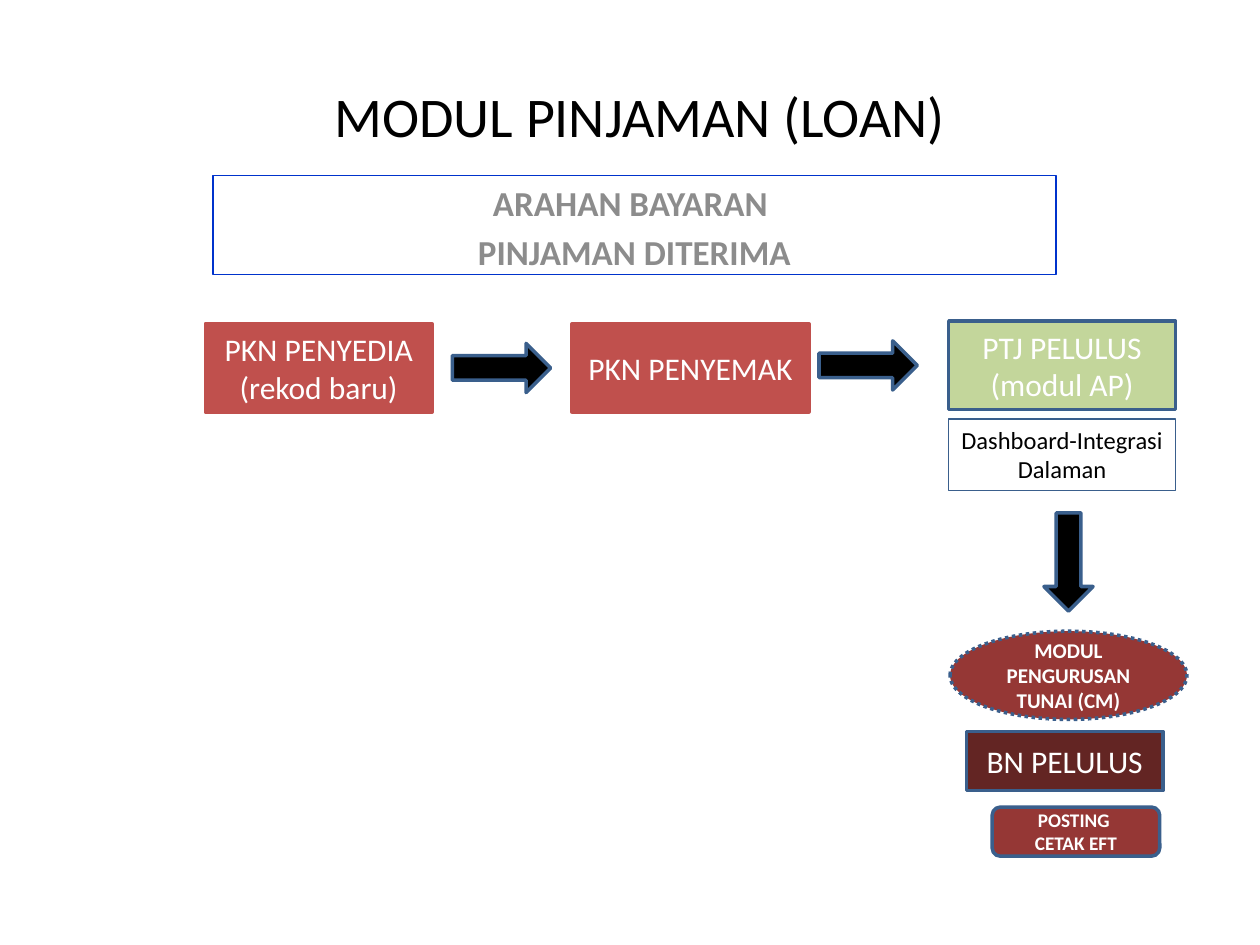
from dataclasses import dataclass
from pptx import Presentation
from pptx.dml.color import RGBColor
from pptx.enum.dml import MSO_LINE as Dash
from pptx.enum.shapes import MSO_SHAPE as Kind
from pptx.enum.text import MSO_ANCHOR as Anchor, MSO_AUTO_SIZE as Fit, PP_ALIGN as Align
from pptx.util import Inches, Pt


@dataclass(frozen=True)
class Theme:
    font: str = "Calibri"
    black: str = "000000"
    white: str = "FFFFFF"
    grey: str = "8C8C8C"
    blue: str = "0033CC"
    edge: str = "3A5F8C"
    red: str = "C0504D"
    green: str = "C3D69B"
    brick: str = "953735"
    wine: str = "632523"
    title: int = 32
    head: int = 20
    step: int = 18
    note: int = 14
    unit: int = 12
    small: int = 11
    thin: float = 0.75
    thick: float = 2


T = Theme()
TITLE = ["MODUL PINJAMAN (LOAN)"]
HEAD = ["ARAHAN BAYARAN ", "PINJAMAN DITERIMA"]

# Grid: centre lines of the columns and rows
COLS = {"maker": 2.53, "go1": 3.98, "check": 5.48, "go2": 6.89,
        "pass": 8.43, "cash": 8.48, "bank": 8.45, "post": 8.54}
ROWS = {"flow": 2.92, "end": 2.9, "note": 3.61, "down": 4.46,
        "cash": 5.36, "bank": 6.04, "post": 6.6}

# Column, row, width, height, lines of text, look
BOXES = [
    ("maker", "flow", 1.8, 0.7, ["PKN PENYEDIA", "(rekod baru)"],
     dict(fill=T.red, edge=T.red)),
    ("check", "flow", 1.88, 0.7, ["PKN PENYEMAK"], dict(fill=T.red, edge=T.red)),
    ("pass", "end", 1.8, 0.7, ["PTJ PELULUS", "(modul AP)"], dict(fill=T.green)),
    ("pass", "note", 1.8, 0.57, ["Dashboard-Integrasi Dalaman"],
     dict(width=T.thin, size=T.note, color=T.black, anchor=Anchor.TOP)),
    ("cash", "cash", 1.88, 0.7, ["MODUL PENGURUSAN TUNAI (CM)"],
     dict(kind=Kind.OVAL, fill=T.brick, dash=Dash.ROUND_DOT, size=T.unit, bold=True)),
    ("bank", "bank", 1.56, 0.47, ["BN PELULUS"], dict(fill=T.wine)),
    ("post", "post", 1.33, 0.39, ["POSTING ", "CETAK EFT"],
     dict(kind=Kind.ROUNDED_RECTANGLE, fill=T.brick, size=T.small, bold=True)),
]
ARROWS = [("go1", "flow", 0), ("go2", "end", 0), ("cash", "down", 90)]


def rgb(code):
    return RGBColor.from_string(code)


def write(shape, lines, size=T.step, color=T.white, bold=False, anchor=Anchor.MIDDLE):
    frame = shape.text_frame
    frame.word_wrap = True
    frame.auto_size = Fit.NONE
    frame.vertical_anchor = anchor
    for i, line in enumerate(lines):
        para = frame.add_paragraph() if i else frame.paragraphs[0]
        para.alignment = Align.CENTER
        run = para.add_run()
        run.text = line
        font = run.font
        font.name, font.size, font.bold = T.font, Pt(size), bold
        font.color.rgb = rgb(color)


def place(shape, left, top, wide, high):
    shape.left, shape.top = Inches(left), Inches(top)
    shape.width, shape.height = Inches(wide), Inches(high)


def draw(slide, col, row, wide, high, kind=Kind.RECTANGLE, fill=None,
         edge=T.edge, width=T.thick, dash=None):
    """Add a shape centred on a grid point."""
    left, top = COLS[col] - wide / 2, ROWS[row] - high / 2
    shape = slide.shapes.add_shape(kind, *map(Inches, (left, top, wide, high)))
    shape.shadow.inherit = False
    if fill:
        shape.fill.solid()
        shape.fill.fore_color.rgb = rgb(fill)
    else:
        shape.fill.background()
    shape.line.color.rgb = rgb(edge)
    shape.line.width = Pt(width)
    if dash:
        shape.line.dash_style = dash
    return shape


def main():
    deck = Presentation()
    deck.slide_width, deck.slide_height = Inches(10), Inches(7.5)
    slide = deck.slides.add_slide(deck.slide_layouts[0])

    title, head = slide.placeholders
    place(title, 1.93, 0.6, 6.3, 0.64)
    write(title, TITLE, size=T.title, color=T.black, anchor=Anchor.TOP)
    place(head, 1.69, 1.39, 6.69, 0.79)
    head.line.color.rgb = rgb(T.blue)
    head.line.width = Pt(T.thin)
    write(head, HEAD, size=T.head, color=T.grey, bold=True, anchor=Anchor.TOP)

    for col, row, wide, high, lines, look in BOXES:
        text = {k: v for k, v in look.items() if k in ("size", "color", "bold", "anchor")}
        form = {k: v for k, v in look.items() if k not in text}
        write(draw(slide, col, row, wide, high, **form), lines, **text)
    for col, row, turn in ARROWS:
        arrow = draw(slide, col, row, 0.78, 0.39, kind=Kind.RIGHT_ARROW, fill=T.black)
        arrow.rotation = turn
    deck.save("out.pptx")


if __name__ == "__main__":
    main()
